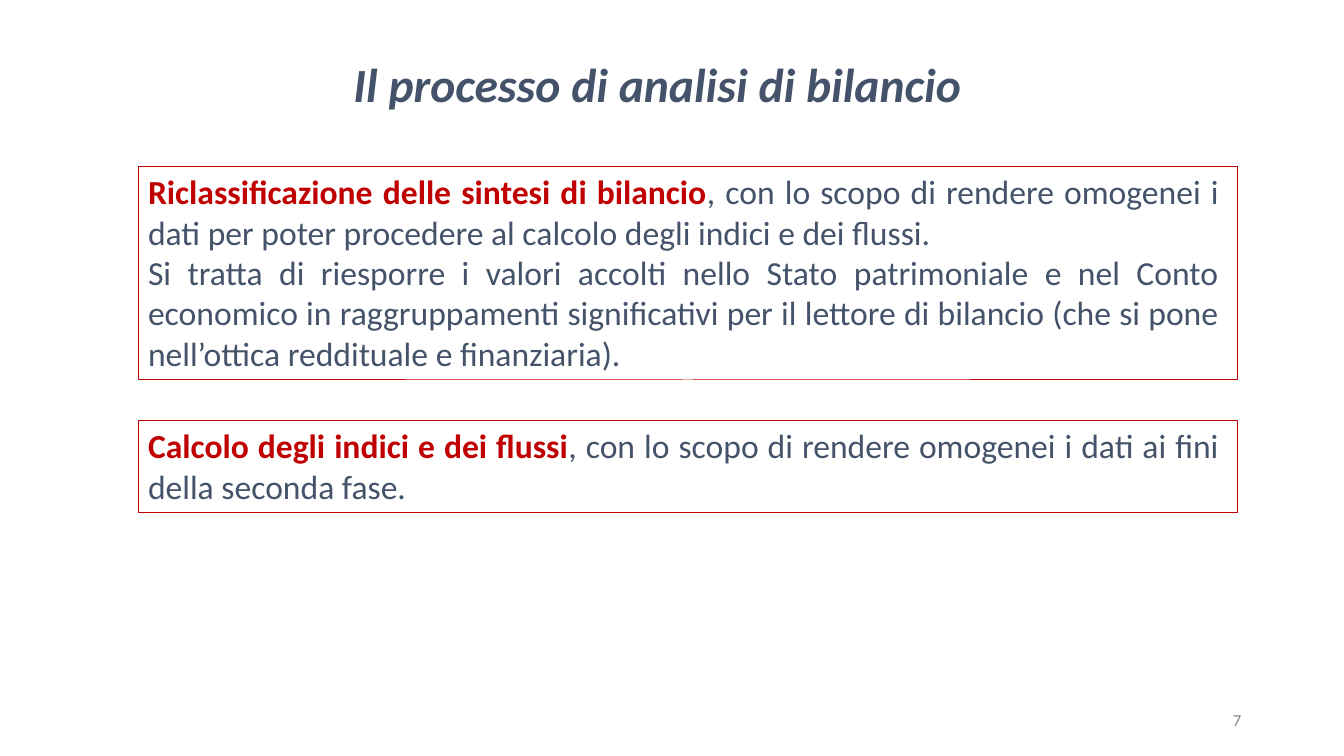
from pptx import Presentation
from pptx.dml.color import RGBColor
from pptx.enum.shapes import MSO_SHAPE
from pptx.enum.text import MSO_ANCHOR, PP_ALIGN
from pptx.util import Inches, Pt

SLATE = RGBColor(0x44, 0x53, 0x6A)
RED = RGBColor(0xC0, 0x00, 0x00)
GREY = RGBColor(0x88, 0x88, 0x88)
FONT = "Calibri"

# Both framed boxes share one column
COLUMN_LEFT, COLUMN_WIDTH = 1.37, 10.9
BOXES = [
    (1.65, 2.12, [
        ("Riclassificazione delle sintesi di bilancio",
         ", con lo scopo di rendere omogenei i dati per poter procedere "
         "al calcolo degli indici e dei flussi."),
        ("", "Si tratta di riesporre i valori accolti nello Stato patrimoniale "
         "e nel Conto economico in raggruppamenti significativi per il lettore "
         "di bilancio (che si pone nell’ottica reddituale e finanziaria)."),
    ]),
    (4.17, 0.91, [
        ("Calcolo degli indici e dei flussi",
         ", con lo scopo di rendere omogenei i dati ai fini della seconda fase."),
    ]),
]


def set_font(font, size, color):
    font.name = FONT
    font.size = Pt(size)
    font.color.rgb = color


def set_frame(frame, left=0, top=0, right=0):
    frame.margin_left, frame.margin_top = Inches(left), Inches(top)
    frame.margin_right, frame.margin_bottom = Inches(right), 0
    frame.vertical_anchor = MSO_ANCHOR.TOP


def add_label(slide, box, text, size, color, alignment):
    """One line of text in a box without margins."""
    frame = slide.shapes.add_textbox(*map(Inches, box)).text_frame
    set_frame(frame)
    frame.word_wrap = False
    paragraph = frame.paragraphs[0]
    paragraph.text = text
    paragraph.alignment = alignment
    set_font(paragraph.font, size, color)
    return paragraph


def add_framed_text(slide, box, paragraphs):
    """Red frame whose paragraphs may open with a bold red heading."""
    shape = slide.shapes.add_shape(MSO_SHAPE.RECTANGLE, *map(Inches, box))
    shape.shadow.inherit = False
    shape.fill.background()
    shape.line.color.rgb = RED
    shape.line.width = Pt(0.72)
    frame = shape.text_frame
    set_frame(frame, left=0.1, top=0.05, right=0.18)
    frame.word_wrap = True
    for index, (heading, body) in enumerate(paragraphs):
        paragraph = frame.add_paragraph() if index else frame.paragraphs[0]
        paragraph.alignment = PP_ALIGN.JUSTIFY
        set_font(paragraph.font, 24, SLATE)
        if heading:
            run = paragraph.add_run()
            run.text = heading
            set_font(run.font, 24, RED)
            run.font.bold = True
        run = paragraph.add_run()
        run.text = body
        set_font(run.font, 24, SLATE)


def build_slide(presentation):
    slide = presentation.slides.add_slide(presentation.slide_layouts[6])
    # Title
    title = add_label(slide, (3.49, 0.54, 6.06, 0.59),
                      "Il processo di analisi di bilancio", 34, SLATE,
                      PP_ALIGN.CENTER)
    title.font.bold = True
    title.font.italic = True
    # Framed steps of the analysis
    for top, height, paragraphs in BOXES:
        add_framed_text(slide, (COLUMN_LEFT, top, COLUMN_WIDTH, height), paragraphs)
    # Slide number
    number = add_label(slide, (12.2, 7.07, 0.14, 0.19), "7", 12, GREY,
                       PP_ALIGN.CENTER)
    number.line_spacing = Pt(12.4)


def main():
    presentation = Presentation()
    presentation.slide_width = Inches(13.33)
    presentation.slide_height = Inches(7.5)
    build_slide(presentation)
    presentation.save("out.pptx")


if __name__ == "__main__":
    main()
